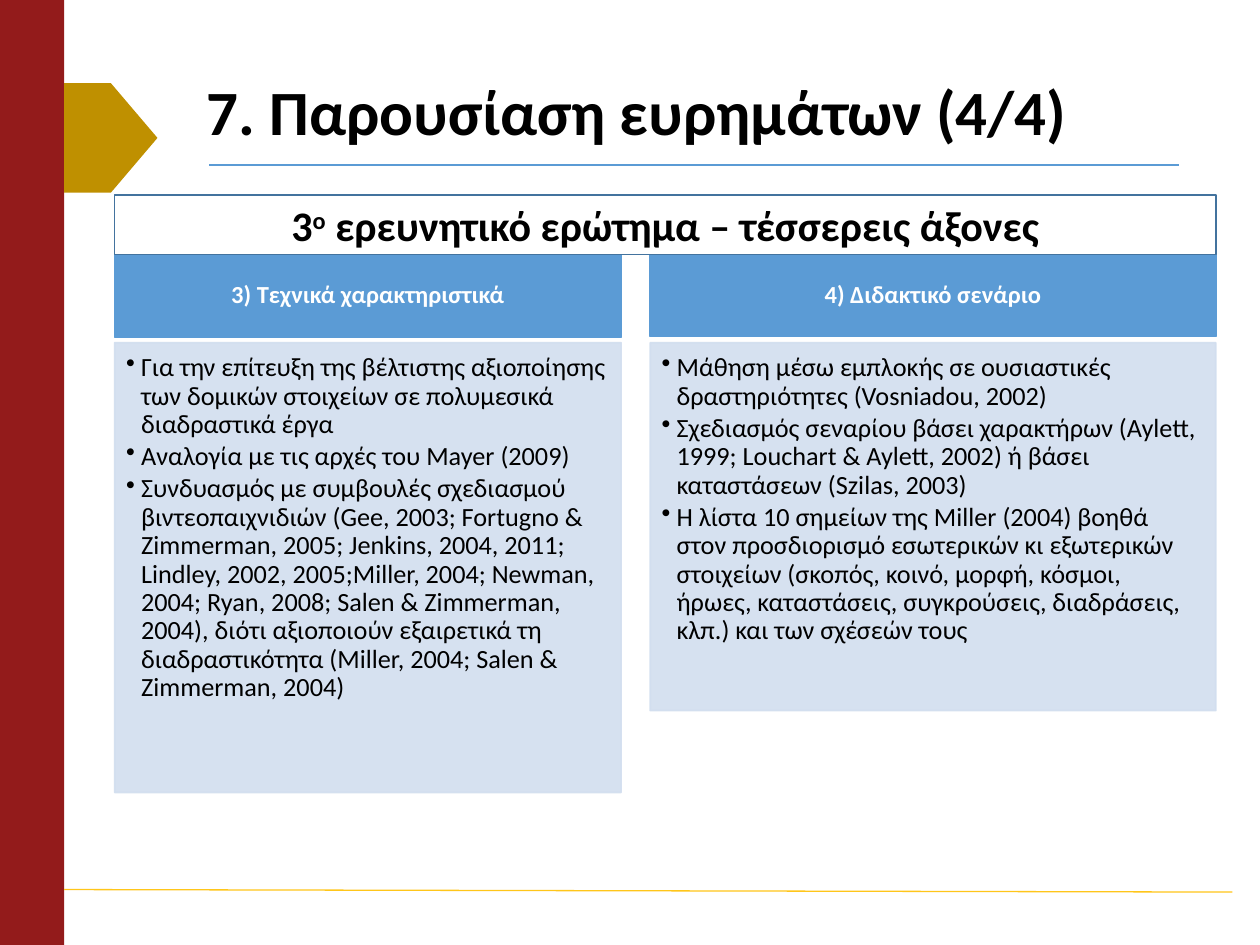
from lxml.etree import SubElement
from pptx import Presentation
from pptx.dml.color import RGBColor
from pptx.enum.shapes import MSO_CONNECTOR as Connector, MSO_SHAPE as Shape
from pptx.enum.text import MSO_ANCHOR as Anchor, MSO_AUTO_SIZE as AutoSize, PP_ALIGN as Align
from pptx.oxml.ns import qn
from pptx.util import Inches, Pt

FONT = "Calibri"
BLUE, PALE_BLUE, DARK_BLUE = "5B9BD5", "D2DEEF", "43739E"
RED, OCHRE, YELLOW = "931B1B", "BF9000", "FFC61A"
BLACK, WHITE = "000000", "FFFFFF"

BOX_TOP, BODY_TOP = 2.02, 2.72

# left, width, header height, body height, heading, bullets
COLUMNS = [
    (0.91, 4.02, 0.66, 3.57, "3) Τεχνικά χαρακτηριστικά", [
        "Για την επίτευξη της βέλτιστης αξιοποίησης των δομικών στοιχείων σε "
        "πολυμεσικά διαδραστικά έργα",
        "Αναλογία με τις αρχές του Mayer (2009)",
        "Συνδυασμός με συμβουλές σχεδιασμού βιντεοπαιχνιδιών (Gee, 2003; "
        "Fortugno & Zimmerman, 2005; Jenkins, 2004, 2011; Lindley, 2002, "
        "2005;Miller, 2004; Newman, 2004; Ryan, 2008; Salen & Zimmerman, 2004), "
        "διότι αξιοποιούν εξαιρετικά τη διαδραστικότητα (Miller, 2004; Salen & "
        "Zimmerman, 2004)",
    ]),
    (5.16, 4.49, 0.65, 2.92, "4) Διδακτικό σενάριο", [
        "Μάθηση μέσω εμπλοκής σε ουσιαστικές δραστηριότητες (Vosniadou, 2002)",
        "Σχεδιασμός σεναρίου βάσει χαρακτήρων (Aylett, 1999; Louchart & Aylett, "
        "2002) ή βάσει καταστάσεων (Szilas, 2003)",
        "Η λίστα 10 σημείων της Miller (2004) βοηθά στον προσδιορισμό εσωτερικών "
        "κι εξωτερικών στοιχείων (σκοπός, κοινό, μορφή, κόσμοι, ήρωες, "
        "καταστάσεις, συγκρούσεις, διαδράσεις, κλπ.) και των σχέσεών τους",
    ]),
]


def color(value):
    return RGBColor.from_string(value)


def set_opacity(shape, percent):
    for element in shape._element.spPr.iter(qn("a:srgbClr")):
        SubElement(element, qn("a:alpha")).set("val", str(percent * 1000))


def add_box(slide, left, top, width, height, fill=None, line=None, kind=Shape.RECTANGLE):
    shape = slide.shapes.add_shape(
        kind, Inches(left), Inches(top), Inches(width), Inches(height))
    shape.shadow.inherit = False
    if fill:
        shape.fill.solid()
        shape.fill.fore_color.rgb = color(fill)
    else:
        shape.fill.background()
    if line:
        shape.line.color.rgb = color(line)
        shape.line.width = Pt(1)
    else:
        shape.line.fill.background()
    return shape


def add_rule(slide, start, end, line):
    rule = slide.shapes.add_connector(
        Connector.STRAIGHT, *(Inches(value) for value in start + end))
    rule.line.color.rgb = color(line)
    rule.line.width = Pt(0.75)
    SubElement(rule._element.spPr, qn("a:effectLst"))


def make_bullet(paragraph):
    paragraph.level = 1
    properties = paragraph._p.get_or_add_pPr()
    properties.set("marL", str(Inches(0.12)))
    properties.set("indent", str(Inches(-0.12)))
    SubElement(properties, qn("a:buChar")).set("char", "•")


def write_text(shape, paragraphs, size, font_color=BLACK, bold=False, align=Align.LEFT,
               anchor=Anchor.MIDDLE, insets=(0.1, 0.05, 0.1, 0.05), line_spacing=0.9,
               space_after=0, bullets=False):
    """Each paragraph is a list of (text, baseline percent) runs."""
    frame = shape.text_frame
    frame.word_wrap = True
    frame.auto_size = AutoSize.NONE
    frame.vertical_anchor = anchor
    (frame.margin_left, frame.margin_top,
     frame.margin_right, frame.margin_bottom) = (Inches(inset) for inset in insets)
    for index, runs in enumerate(paragraphs):
        paragraph = frame.add_paragraph() if index else frame.paragraphs[0]
        paragraph.alignment = align
        paragraph.line_spacing = line_spacing
        paragraph.space_before = Pt(0)
        paragraph.space_after = Pt(space_after)
        if bullets:
            make_bullet(paragraph)
        for text, baseline in runs:
            run = paragraph.add_run()
            run.text = text
            run.font.name = FONT
            run.font.size = Pt(size)
            run.font.bold = bold
            run.font.color.rgb = color(font_color)
            if baseline:
                run.font._element.set("baseline", str(baseline * 1000))


def add_title(slide, text):
    title = slide.shapes.title
    title.left, title.top = Inches(1.54), Inches(0.6)
    title.width, title.height = Inches(7.87), Inches(0.63)
    write_text(title, [[(text, 0)]], 36, bold=True)


def add_column(slide, left, width, header_height, body_height, heading, bullets):
    header = add_box(slide, left, BOX_TOP, width, header_height, BLUE, BLUE)
    write_text(header, [[(heading, 0)]], 14, WHITE, bold=True, align=Align.CENTER,
               insets=(0.11, 0.06, 0.11, 0.06))
    body = add_box(slide, left, BODY_TOP, width, body_height, PALE_BLUE, PALE_BLUE)
    set_opacity(body, 90)
    write_text(body, [[(bullet, 0)] for bullet in bullets], 15, anchor=Anchor.TOP,
               insets=(0.09, 0.09, 0.12, 0.13), space_after=2.2, bullets=True)


def main():
    presentation = Presentation()
    presentation.slide_width, presentation.slide_height = Inches(10), Inches(7.5)
    slide = presentation.slides.add_slide(presentation.slide_layouts[5])

    # Side band, rules and marker
    add_box(slide, 0, 0, 0.51, 7.5, RED)
    add_rule(slide, (1.66, 1.31), (9.36, 1.31), BLUE)
    add_rule(slide, (0.51, 7.06), (9.78, 7.08), YELLOW)
    add_box(slide, 0.51, 0.66, 0.74, 0.87, OCHRE, kind=Shape.PENTAGON)

    add_title(slide, "7. Παρουσίαση ευρημάτων (4/4)")

    # Two columns under a shared banner
    for column in COLUMNS:
        add_column(slide, *column)
    banner = add_box(slide, 0.91, 1.55, 8.74, 0.47, line=DARK_BLUE)
    write_text(banner, [[("3", 0), ("ο", 30), (" ερευνητικό ερώτημα – τέσσερεις άξονες", 0)]],
               24, bold=True, align=Align.CENTER, line_spacing=1.0)

    presentation.save("out.pptx")


if __name__ == "__main__":
    main()
